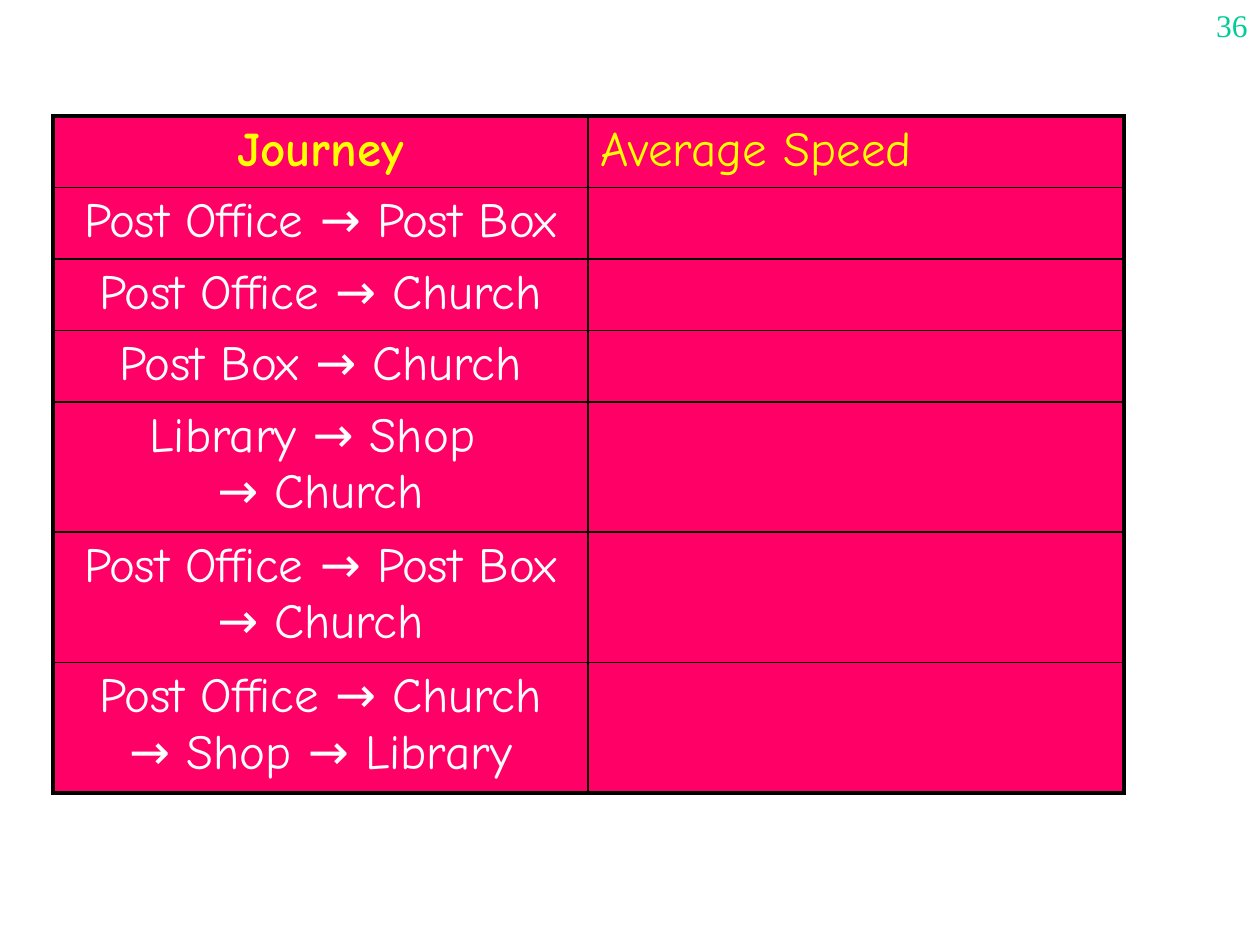
from lxml import etree
from pptx import Presentation
from pptx.dml.color import RGBColor
from pptx.enum.text import PP_ALIGN
from pptx.oxml.ns import qn
from pptx.util import Pt

LEFT, CENTER, RIGHT = PP_ALIGN.LEFT, PP_ALIGN.CENTER, PP_ALIGN.RIGHT
EMU_PER_PX = 914400 / 126
COLORS = {
    "cell": "FF0066",
    "heading": "FFFF00",
    "journey": "FFFFFF",
    "number": "00CC99",
    "border": "000000",
}
BLANK_LAYOUT = 6
OUTER, INNER = 2.25, 1

JOURNEYS = [
    "Post Office → Post Box",
    "Post Office → Church",
    "Post Box → Church",
    "Library → Shop \v→ Church",
    "Post Office → Post Box → Church",
    "Post Office → Church\v→ Shop → Library",
]


def px(length):
    return round(length * EMU_PER_PX)


def write_text(frame, text, *, size, font, color, bold=False, align=LEFT):
    """Write one paragraph; a vertical tab makes a line break."""
    paragraph = frame.paragraphs[0]
    paragraph.text = text
    paragraph.alignment = align
    for run in paragraph.runs:
        run.font.size = Pt(size)
        run.font.name = font
        run.font.bold = bold
        run.font.color.rgb = RGBColor.from_string(COLORS[color])


class SlideBuilder:
    table_font = "Comic Neue"
    number_font = "Times New Roman"
    table_size = 28
    number_size = 18

    def __init__(self, slide):
        self.slide = slide

    def number(self, text, left, top, width, height):
        box = self.slide.shapes.add_textbox(px(left), px(top), px(width), px(height))
        box.text_frame.word_wrap = True
        write_text(box.text_frame, text, size=self.number_size,
                   font=self.number_font, color="number", align=RIGHT)

    def borders(self, cell, widths):
        properties = cell._tc.get_or_add_tcPr()
        for position, (side, width) in enumerate(widths.items()):
            line = etree.Element(qn(f"a:ln{side}"), w=str(Pt(width)))
            fill = etree.SubElement(line, qn("a:solidFill"))
            etree.SubElement(fill, qn("a:srgbClr"), val=COLORS["border"])
            properties.insert(position, line)

    def table(self, rows, left, top, column_widths, row_height):
        row_count, column_count = len(rows), len(column_widths)
        table = self.slide.shapes.add_table(
            row_count, column_count, px(left), px(top),
            px(sum(column_widths)), px(row_height * row_count)).table
        for column, width in zip(table.columns, column_widths):
            column.width = px(width)
        for i, row in enumerate(rows):
            table.rows[i].height = px(row_height)
            for j, (text, style) in enumerate(row):
                cell = table.cell(i, j)
                cell.fill.solid()
                cell.fill.fore_color.rgb = RGBColor.from_string(COLORS["cell"])
                self.borders(cell, {
                    "L": OUTER if j == 0 else INNER,
                    "R": OUTER if j == column_count - 1 else INNER,
                    "T": OUTER if i == 0 else INNER,
                    "B": OUTER if i == row_count - 1 else INNER,
                })
                if text:
                    write_text(cell.text_frame, text, size=self.table_size,
                               font=self.table_font, **style)


def main():
    presentation = Presentation()
    presentation.slide_width, presentation.slide_height = px(1260), px(945)
    layout = presentation.slide_layouts[BLANK_LAYOUT]
    builder = SlideBuilder(presentation.slides.add_slide(layout))

    # Slide number
    builder.number("36", 998, 0, 262, 63)

    # Journeys, with the speeds left open
    journey = {"color": "journey", "align": CENTER}
    rows = [[("Journey", {"color": "heading", "bold": True, "align": CENTER}),
             ("Average Speed", {"color": "heading"})]]
    rows += [[(text, journey), ("", {})] for text in JOURNEYS]
    builder.table(rows, 53, 116, [535, 536], 66)

    presentation.save("out.pptx")


if __name__ == "__main__":
    main()
